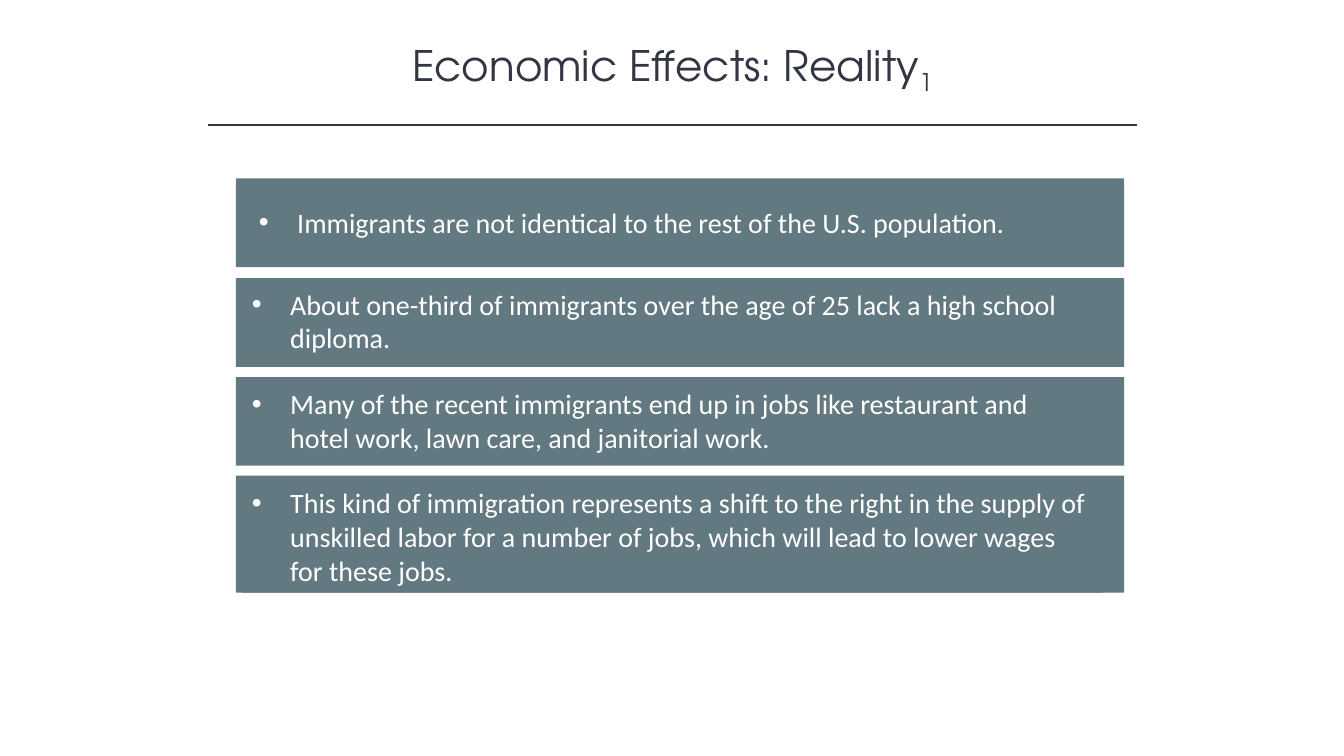
from lxml import etree
from pptx import Presentation
from pptx import util as u
from pptx.dml.color import RGBColor
from pptx.enum import shapes, text
from pptx.oxml.ns import qn

INK, SLATE, WHITE = "323542", "627981", "FFFFFF"
BAR_LEFT, BAR_WIDTH, TEXT_WIDTH = 2.34, 8.81, 8.54

# bar top, bar height, text left, text top, text height, wording
BARS = [
    (1.77, 0.88, 2.47, 1.99, 0.44,
     "Immigrants are not identical to the rest of the U.S. population."),
    (2.76, 0.88, 2.4, 2.8, 0.77,
     "About one-third of immigrants over the age of 25 lack a high school diploma."),
    (3.74, 0.88, 2.4, 3.79, 0.77,
     "Many of the recent immigrants end up in jobs like restaurant and hotel work, "
     "lawn care, and janitorial work."),
    (4.72, 1.16, 2.4, 4.77, 1.11,
     "This kind of immigration represents a shift to the right in the supply of "
     "unskilled labor for a number of jobs, which will lead to lower wages for these jobs."),
]


def color(value):
    return RGBColor.from_string(value)


def inches(*values):
    return [u.Inches(v) for v in values]


class Deck:
    title_font, body_font = "TeX Gyre Adventor", "Calibri"

    def __init__(self, slide):
        self.s = slide

    def style(self, font, name, size, fill):
        font.name, font.size = name, u.Pt(size)
        font.color.rgb = color(fill)

    def title(self, words, subscript, *box):
        sp = self.s.shapes.add_textbox(*inches(*box))
        tf = sp.text_frame
        tf.word_wrap = True
        tf.vertical_anchor = text.MSO_ANCHOR.MIDDLE
        p = tf.paragraphs[0]
        p.alignment = text.PP_ALIGN.CENTER
        for part in (words, subscript):
            r = p.add_run()
            r.text = part
            self.style(r.font, self.title_font, 30, INK)
        r.font._element.set("baseline", "-25000")

    def rule(self, x1, y1, x2, y2):
        line = self.s.shapes.add_connector(
            shapes.MSO_CONNECTOR.STRAIGHT, *inches(x1, y1, x2, y2))
        line.line.color.rgb = color(INK)
        line.line.width = u.Pt(1)
        etree.SubElement(line._element.spPr, qn("a:effectLst"))

    def rect(self, parent, *box):
        sp = parent.shapes.add_shape(shapes.MSO_SHAPE.RECTANGLE, *inches(*box))
        sp.shadow.inherit = False
        sp.fill.solid()
        sp.fill.fore_color.rgb = color(SLATE)
        sp.line.fill.background()
        return sp

    def bar(self, top, height, text_left, text_top, text_height, words):
        """Group a backing rectangle with its bulleted text."""
        group = self.s.shapes.add_group_shape()
        self.rect(group, BAR_LEFT, top, BAR_WIDTH, height)
        sp = self.rect(group, text_left, text_top, TEXT_WIDTH, text_height)
        tf = sp.text_frame
        tf.word_wrap = True
        tf.vertical_anchor = text.MSO_ANCHOR.TOP
        tf.text = words
        p = tf.paragraphs[0]
        p.alignment = text.PP_ALIGN.LEFT
        pPr = p._p.get_or_add_pPr()
        indent = u.Inches(0.38)
        pPr.set("marL", str(indent))
        pPr.set("indent", str(-indent))
        etree.SubElement(pPr, qn("a:buFont")).set("typeface", "Arial")
        etree.SubElement(pPr, qn("a:buChar")).set("char", "•")
        self.style(p.runs[0].font, self.body_font, 20, WHITE)


def main():
    prs = Presentation()
    prs.slide_width, prs.slide_height = inches(13.33, 7.5)
    deck = Deck(prs.slides.add_slide(prs.slide_layouts[6]))
    deck.title("Economic Effects: Reality", "1", 1.67, 0.37, 10, 0.61)
    deck.rule(2.06, 1.24, 11.28, 1.24)
    for bar in BARS:
        deck.bar(*bar)
    prs.save("out.pptx")


if __name__ == "__main__":
    main()
